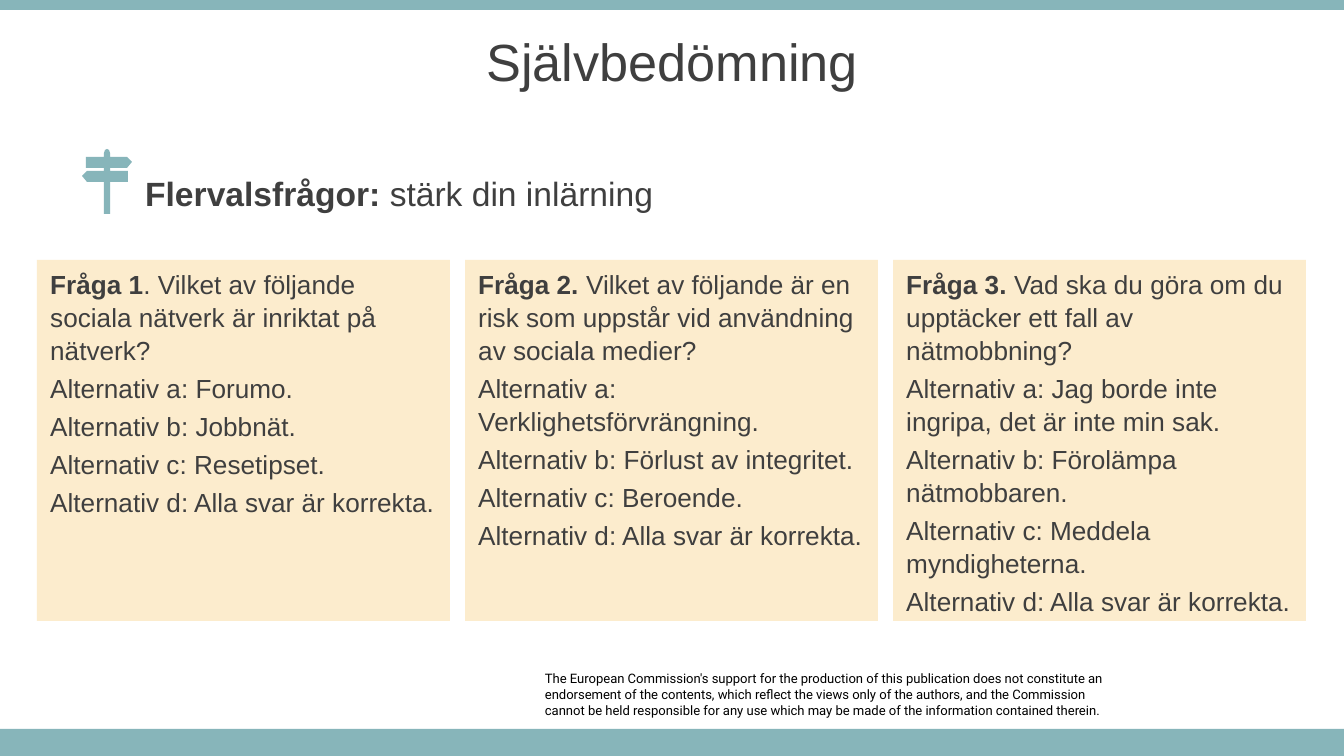
import pptx
import pptx.dml.color
import pptx.enum.shapes
import pptx.enum.text
import pptx.util

PX = 914400 / 134.4
TEAL = pptx.dml.color.RGBColor(0x87, 0xB5, 0xBA)
CREAM = pptx.dml.color.RGBColor(0xFC, 0xEC, 0xCD)
GRAY = pptx.dml.color.RGBColor(0x3F, 0x3F, 0x3F)
BLACK = pptx.dml.color.RGBColor(0, 0, 0)
ALIGN = pptx.enum.text.PP_ALIGN
ANCHOR = pptx.enum.text.MSO_ANCHOR

LAST_OPTION = "Alla svar är korrekta."
QUESTIONS = [
    ("Fråga 1", ". Vilket av följande sociala nätverk är inriktat på nätverk?",
     ["Forumo.", "Jobbnät.", "Resetipset.", LAST_OPTION]),
    ("Fråga 2. ", "Vilket av följande är en risk som uppstår vid användning av sociala medier?",
     ["Verklighetsförvrängning.", "Förlust av integritet.", "Beroende.", LAST_OPTION]),
    ("Fråga 3. ", "Vad ska du göra om du upptäcker ett fall av nätmobbning?",
     ["Jag borde inte ingripa, det är inte min sak.", "Förolämpa nätmobbaren.",
      "Meddela myndigheterna.", LAST_OPTION]),
]
DISCLAIMER = [
    "The European Commission's support for the production of this publication does not "
    "constitute an endorsement of the contents, which reflect the views only of the authors, "
    "and the Commission",
    "cannot be held responsible for any use which may be made of the information "
    "contained therein.",
]
SIGNPOST = [
    (107, 149), (109, 150), (110, 153), (110, 157), (127, 157), (132, 162), (127, 168),
    (110, 168), (110, 171), (128, 171), (128, 182), (110, 182), (110, 214), (104, 214),
    (104, 182), (87, 182), (82, 176), (87, 171), (104, 171), (104, 168), (86, 168),
    (86, 157), (104, 157), (104, 153), (105, 150),
]


def px(length):
    return pptx.util.Emu(round(length * PX))


def paint(shape, color):
    shape.shadow.inherit = False
    shape.fill.solid()
    shape.fill.fore_color.rgb = color
    shape.line.fill.background()


def add_rectangle(slide, left, top, width, height, color):
    shape = slide.shapes.add_shape(pptx.enum.shapes.MSO_SHAPE.RECTANGLE,
                                   px(left), px(top), px(width), px(height))
    paint(shape, color)
    return shape


def add_signpost(slide):
    builder = slide.shapes.build_freeform(*SIGNPOST[0], scale=PX)
    builder.add_line_segments(SIGNPOST[1:], close=True)
    paint(builder.convert_to_shape(), TEAL)


def write_paragraphs(text_frame, paragraphs, size, color=GRAY, font="Arial",
                     alignment=ALIGN.LEFT, space_before=0, line_spacing=1.0):
    """Fill the frame; each paragraph is a list of (text, bold) pairs."""
    text_frame.word_wrap = True
    for index, runs in enumerate(paragraphs):
        paragraph = text_frame.add_paragraph() if index else text_frame.paragraphs[0]
        paragraph.alignment = alignment
        paragraph.line_spacing = line_spacing
        if index:
            paragraph.space_before = pptx.util.Pt(space_before)
        for text, bold in runs:
            run = paragraph.add_run()
            run.text = text
            run.font.name = font
            run.font.size = pptx.util.Pt(size)
            run.font.bold = bold
            run.font.color.rgb = color


def add_text(slide, left, top, width, height, paragraphs, size, anchor=ANCHOR.MIDDLE, **style):
    box = slide.shapes.add_textbox(px(left), px(top), px(width), px(height))
    box.text_frame.vertical_anchor = anchor
    write_paragraphs(box.text_frame, paragraphs, size, **style)
    return box


def add_disclaimer(slide):
    box = add_text(slide, 545, 671, 561, 47, [[(text, False)] for text in DISCLAIMER], 7,
                   anchor=ANCHOR.TOP, color=BLACK, font="Roboto")
    frame = box.text_frame
    frame.margin_left = frame.margin_right = frame.margin_top = frame.margin_bottom = 0


def add_question(slide, left, label, question, options):
    card = add_rectangle(slide, left, 260, 413, 361, CREAM)
    card.text_frame.vertical_anchor = ANCHOR.TOP
    paragraphs = [[(label, True), (question, False)]]
    for letter, option in zip("abcd", options):
        paragraphs.append([(f"Alternativ {letter}: {option}", False)])
    write_paragraphs(card.text_frame, paragraphs, 14, space_before=2.8, line_spacing=1.05)


def main():
    presentation = pptx.Presentation()
    presentation.slide_width = px(1344)
    presentation.slide_height = px(756)
    slide = presentation.slides.add_slide(presentation.slide_layouts[6])

    add_disclaimer(slide)
    add_rectangle(slide, 0, 729, 1344, 27, TEAL)
    add_rectangle(slide, 0, 0, 1344, 10, TEAL)
    add_text(slide, 0, 19, 1344, 84, [[("Självbedömning", False)]], 28, alignment=ALIGN.CENTER)
    add_text(slide, 132, 172, 899, 42,
             [[("Flervalsfrågor: ", True), ("stärk din inlärning", False)]], 18)
    add_signpost(slide)
    for column, (label, question, options) in enumerate(QUESTIONS):
        add_question(slide, 37 + column * 428, label, question, options)

    presentation.save("out.pptx")


if __name__ == "__main__":
    main()
